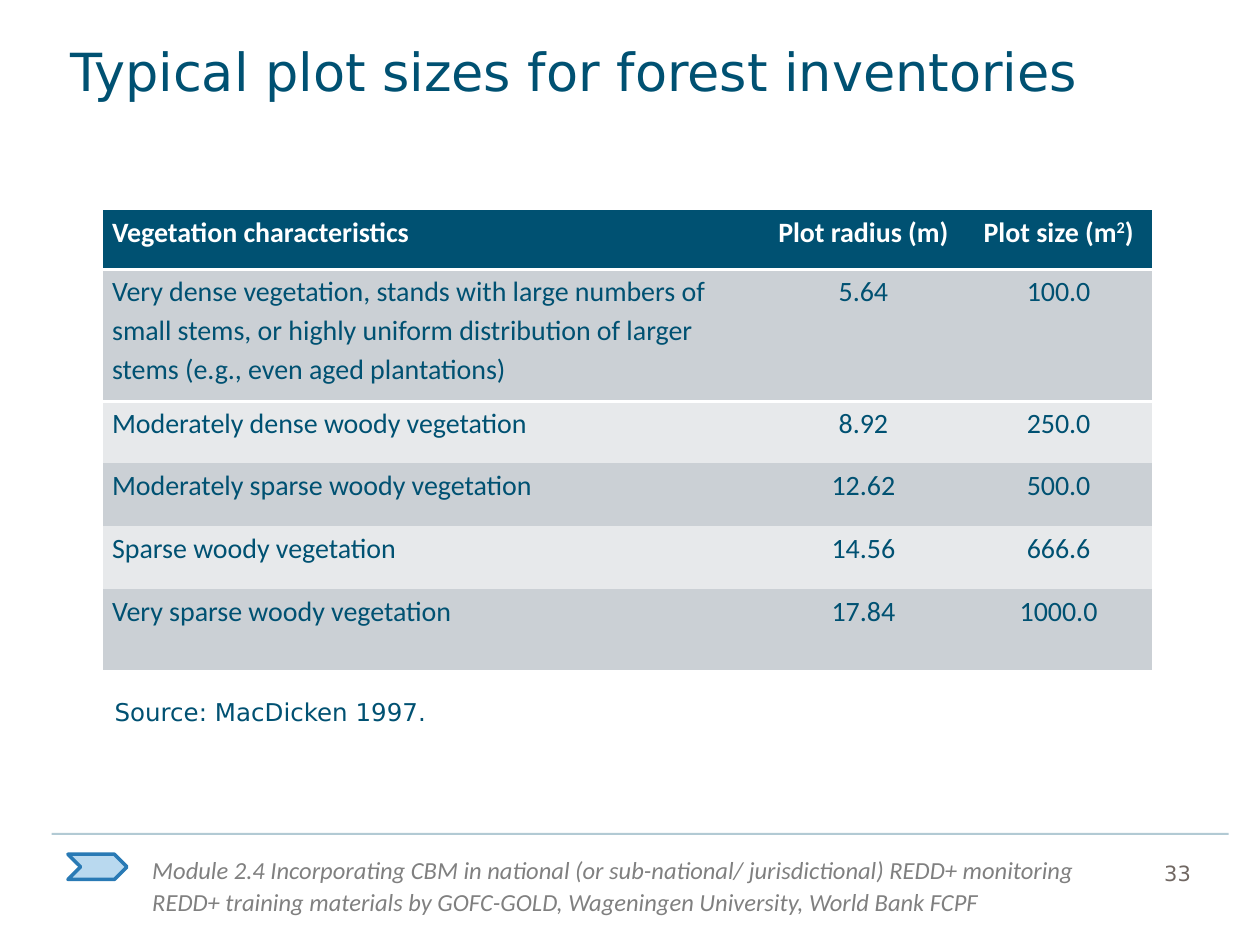
from lxml import etree
from pptx import Presentation
from pptx import util as u
from pptx.dml.color import RGBColor
from pptx.enum import shapes, text
from pptx.oxml import ns

PETROL = RGBColor(0x00, 0x51, 0x72)
WHITE = RGBColor(0xFF, 0xFF, 0xFF)
BAND_DARK = RGBColor(0xCB, 0xD0, 0xD5)
BAND_LIGHT = RGBColor(0xE7, 0xE9, 0xEB)
FOOTER_GREY = RGBColor(0x80, 0x80, 0x80)
NUMBER_GREY = RGBColor(0x70, 0x67, 0x62)
CHEVRON_FILL = RGBColor(0xB9, 0xD9, 0xEF)
CHEVRON_LINE = RGBColor(0x29, 0x7A, 0xB5)

SANS = "DejaVu Sans"
BODY = "Calibri"
NO_TABLE_STYLE = "{2D5ABB26-0587-4C30-8999-92F81FD0307C}"

COLUMN_WIDTHS = (13.28, 4.09, 3.78)
ROW_HEIGHTS = (1.19, 2.67, 1.24, 1.27, 1.27, 1.63)
SUPERSCRIPT = "2"
ROWS = (
    ("Vegetation characteristics", "Plot radius (m)", ("Plot size (m", SUPERSCRIPT, ")")),
    ("Very dense vegetation, stands with large numbers of small stems, or highly "
     "uniform distribution of larger stems (e.g., even aged plantations)", "5.64", "100.0"),
    ("Moderately dense woody vegetation", "8.92", "250.0"),
    ("Moderately sparse woody vegetation", "12.62", "500.0"),
    ("Sparse woody vegetation", "14.56", "666.6"),
    ("Very sparse woody vegetation", "17.84", "1000.0"),
)
FOOTER_LINES = (
    "Module 2.4 Incorporating CBM in national (or sub-national/ jurisdictional) REDD+ monitoring",
    "REDD+ training materials by GOFC-GOLD, Wageningen University, World Bank FCPF",
)


def set_attributes(target, values):
    for name, value in values.items():
        setattr(target, name, value)


def format_font(font, color, **values):
    set_attributes(font, values)
    font.color.rgb = color


def write_lines(frame, lines, spacing, color, **font_values):
    for index, line in enumerate(lines):
        paragraph = frame.add_paragraph() if index else frame.paragraphs[0]
        set_attributes(paragraph, {"alignment": text.PP_ALIGN.LEFT, "line_spacing": spacing,
                                   "space_before": u.Pt(0)})
        run = paragraph.add_run()
        run.text = line
        format_font(run.font, color, **font_values)


def add_text(slide, box, lines, color, wrap=True, **font_values):
    frame = slide.shapes.add_textbox(*map(u.Cm, box)).text_frame
    frame.word_wrap = wrap
    write_lines(frame, lines, u.Pt(18), color, **font_values)


def place_title(slide, left, top, width, height):
    title = slide.shapes.title
    set_attributes(title, {"left": u.Cm(left), "top": u.Cm(top),
                           "width": u.Cm(width), "height": u.Cm(height)})
    frame = title.text_frame
    set_attributes(frame, {"margin_left": u.Cm(0.05), "margin_top": 0,
                           "margin_right": u.Cm(0.25), "margin_bottom": u.Cm(0.89),
                           "vertical_anchor": text.MSO_ANCHOR.TOP, "word_wrap": True,
                           "auto_size": text.MSO_AUTO_SIZE.NONE})
    write_lines(frame, ["Typical plot sizes for forest inventories"], u.Pt(40), PETROL,
                name=SANS, size=u.Pt(30))


def add_border(cell, tag):
    """Draw a 2 pt white border; it must precede the cell's fill."""
    properties = cell._tc.get_or_add_tcPr()
    line = etree.SubElement(properties, ns.qn(tag), w=str(u.Pt(2)))
    fill = etree.SubElement(line, ns.qn("a:solidFill"))
    etree.SubElement(fill, ns.qn("a:srgbClr"), val=str(WHITE))


def fill_cell(cell, content, row, column):
    header = row == 0
    if row < 2:
        add_border(cell, "a:lnB" if header else "a:lnT")
    cell.fill.solid()
    cell.fill.fore_color.rgb = PETROL if header else (BAND_DARK if row % 2 else BAND_LIGHT)
    set_attributes(cell, {"margin_left": u.Cm(0.18), "margin_right": u.Cm(0.18),
                          "margin_top": 0, "margin_bottom": 0})
    paragraph = cell.text_frame.paragraphs[0]
    set_attributes(paragraph, {
        "line_spacing": 1.15,
        "alignment": text.PP_ALIGN.CENTER if column else text.PP_ALIGN.LEFT})
    for part in (content if isinstance(content, tuple) else (content,)):
        run = paragraph.add_run()
        run.text = part
        format_font(run.font, WHITE if header else PETROL,
                    name=BODY, size=u.Pt(16), bold=header)
        if part == SUPERSCRIPT:
            run._r.get_or_add_rPr().set("baseline", "30000")


def add_plot_table(slide, left, top):
    frame = slide.shapes.add_table(
        len(ROWS), len(COLUMN_WIDTHS), u.Cm(left), u.Cm(top),
        u.Cm(sum(COLUMN_WIDTHS)), u.Cm(sum(ROW_HEIGHTS)))
    table = frame.table
    set_attributes(table, {"first_row": False, "horz_banding": False})
    table._tbl.tblPr.find(ns.qn("a:tableStyleId")).text = NO_TABLE_STYLE
    for column, width in zip(table.columns, COLUMN_WIDTHS):
        column.width = u.Cm(width)
    for row, height in zip(table.rows, ROW_HEIGHTS):
        row.height = u.Cm(height)
    for row, contents in enumerate(ROWS):
        for column, content in enumerate(contents):
            fill_cell(table.cell(row, column), content, row, column)


def add_footer(slide, left, top, width):
    """Place the rule along the top edge, with marker, credits and number below it."""
    rule = slide.shapes.add_connector(shapes.MSO_CONNECTOR.STRAIGHT, u.Cm(left), u.Cm(top),
                                      u.Cm(left + width), u.Cm(top))
    rule.line.width = u.Pt(1.25)
    rule.line.color.rgb = PETROL
    color = rule._element.spPr.find(".//" + ns.qn("a:srgbClr"))
    etree.SubElement(color, ns.qn("a:alpha"), val="30000")
    etree.SubElement(rule._element.spPr, ns.qn("a:effectLst"))

    marker = slide.shapes.add_shape(shapes.MSO_SHAPE.CHEVRON, u.Cm(left + 0.33),
                                    u.Cm(top + 0.41), u.Cm(1.19), u.Cm(0.51))
    marker.shadow.inherit = False
    marker.fill.solid()
    marker.fill.fore_color.rgb = CHEVRON_FILL
    marker.line.color.rgb = CHEVRON_LINE
    marker.line.width = u.Pt(2)
    etree.SubElement(marker.line._get_or_add_ln(), ns.qn("a:round"))

    add_text(slide, (left + 1.78, top + 0.26, 19.63, 1.55), FOOTER_LINES, FOOTER_GREY,
             name=BODY, size=u.Pt(14), italic=True)
    add_text(slide, (left + width - 1.55, top + 0.28, 1.55, 0.84), ["33"], NUMBER_GREY,
             name=SANS, size=u.Pt(12))


def main():
    presentation = Presentation()
    presentation.slide_width = u.Cm(25.4)
    presentation.slide_height = u.Cm(19.05)
    slide = presentation.slides.add_slide(presentation.slide_layouts.get_by_name("Title Only"))
    add_footer(slide, 1.04, 16.81, 23.73)
    add_plot_table(slide, 2.08, 4.24)
    place_title(slide, 1.37, 0.64, 23.44, 2.21)
    add_text(slide, (2.06, 13.89, 7.09, 0.89), ["Source: MacDicken 1997."], PETROL,
             wrap=False, name=SANS, size=u.Pt(14))
    presentation.save("out.pptx")


if __name__ == "__main__":
    main()
